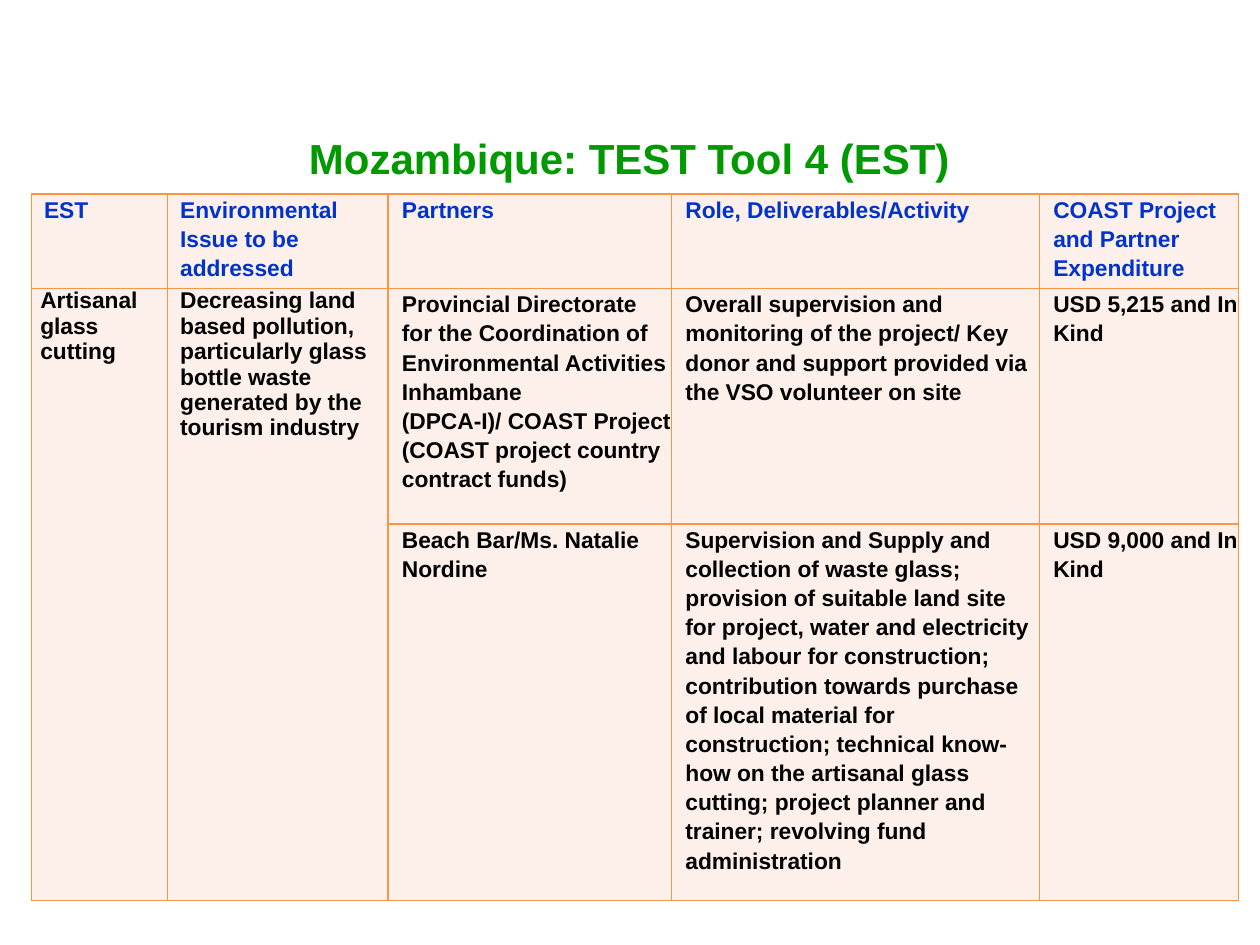
from lxml import etree
from pptx import Presentation
from pptx import util as u
from pptx.dml.color import RGBColor
from pptx.enum import text
from pptx.oxml.ns import qn

GREEN, BLUE, BLACK = "009900", "0033CC", "000000"
ORANGE, PEACH = "F79646", "FDEFE9"
COLUMNS = [1.08, 1.75, 2.25, 2.92, 1.58]
ROWS = [0.68, 1.87, 2.78]
HEADINGS = [
    "EST",
    "Environmental Issue to be addressed",
    "Partners",
    "Role, Deliverables/Activity",
    "COAST Project and Partner Expenditure",
]
ISSUE = [
    "Artisanal glass cutting",
    "Decreasing land based pollution, particularly glass bottle waste "
    "generated by the tourism industry",
]
PARTNERS = [
    [
        "Provincial Directorate for the Coordination of Environmental Activities Inhambane\n"
        "(DPCA-I)/ COAST Project\n"
        "(COAST project country contract funds)",
        "Overall supervision and monitoring of the project/ Key donor and support "
        "provided via the VSO volunteer on site",
        "USD 5,215 and In Kind",
    ],
    [
        "Beach Bar/Ms. Natalie Nordine",
        "Supervision and Supply and collection of waste glass; provision of suitable "
        "land site for project, water and electricity and labour for construction; "
        "contribution towards purchase of local material for construction; technical "
        "know-how on the artisanal glass cutting; project planner and trainer; "
        "revolving fund administration",
        "USD 9,000 and In Kind",
    ],
]


def color(value):
    return RGBColor.from_string(value)


def write(frame, content, size=13, fill=BLACK, align=None, spacing=None, indent=0):
    for index, line in enumerate(content.split("\n")):
        para = frame.paragraphs[0] if index == 0 else frame.add_paragraph()
        para.alignment = align
        para.line_spacing = spacing
        if indent:
            properties = para._p.get_or_add_pPr()
            properties.set("marL", str(u.Inches(indent)))
            properties.set("indent", "0")
        span = para.add_run()
        span.text = line
        span.font.name = "Arial"
        span.font.size = u.Pt(size)
        span.font.bold = True
        span.font.color.rgb = color(fill)


def style_cell(cell, inset):
    cell.margin_left = cell.margin_right = u.Inches(inset)
    cell.margin_top = cell.margin_bottom = 0
    properties = cell._tc.get_or_add_tcPr()
    for side in ("lnL", "lnR", "lnT", "lnB"):
        border = etree.SubElement(properties, qn(f"a:{side}"), w=str(u.Pt(1)))
        solid = etree.SubElement(border, qn("a:solidFill"))
        etree.SubElement(solid, qn("a:srgbClr"), val=ORANGE)
    cell.fill.solid()
    cell.fill.fore_color.rgb = color(PEACH)


def add_title(page, left, top, width, height):
    box = page.shapes.add_textbox(*map(u.Inches, (left, top, width, height)))
    frame = box.text_frame
    frame.word_wrap = True
    frame.vertical_anchor = text.MSO_ANCHOR.TOP
    write(frame, "Mozambique: TEST Tool 4 (EST)", size=24, fill=GREEN,
          align=text.PP_ALIGN.CENTER)


def add_partner_table(page, left, top):
    area = map(u.Inches, (left, top, sum(COLUMNS), sum(ROWS)))
    table = page.shapes.add_table(len(ROWS), len(COLUMNS), *area).table
    for column, width in zip(table.columns, COLUMNS):
        column.width = u.Inches(width)
    for row, height in zip(table.rows, ROWS):
        row.height = u.Inches(height)
        for index, cell in enumerate(row.cells):
            style_cell(cell, 0 if index < len(ISSUE) else 0.01)
    for index, heading in enumerate(HEADINGS):
        write(table.cell(0, index).text_frame, heading, fill=BLUE, spacing=1.15, indent=0.1)
    for index, (issue, indent) in enumerate(zip(ISSUE, (0.07, 0.1))):
        table.cell(1, index).merge(table.cell(2, index))
        write(table.cell(1, index).text_frame, issue, indent=indent)
    for row, partner in enumerate(PARTNERS, start=1):
        for column, content in enumerate(partner, start=len(ISSUE)):
            write(table.cell(row, column).text_frame, content, spacing=1.15, indent=0.1)


def main():
    deck = Presentation()
    deck.slide_width, deck.slide_height = u.Inches(10), u.Inches(7.5)
    page = deck.slides.add_slide(deck.slide_layouts[6])
    add_title(page, 0.33, 1, 9.33, 0.83)
    add_partner_table(page, 0.25, 1.54)
    deck.save("out.pptx")


if __name__ == "__main__":
    main()
